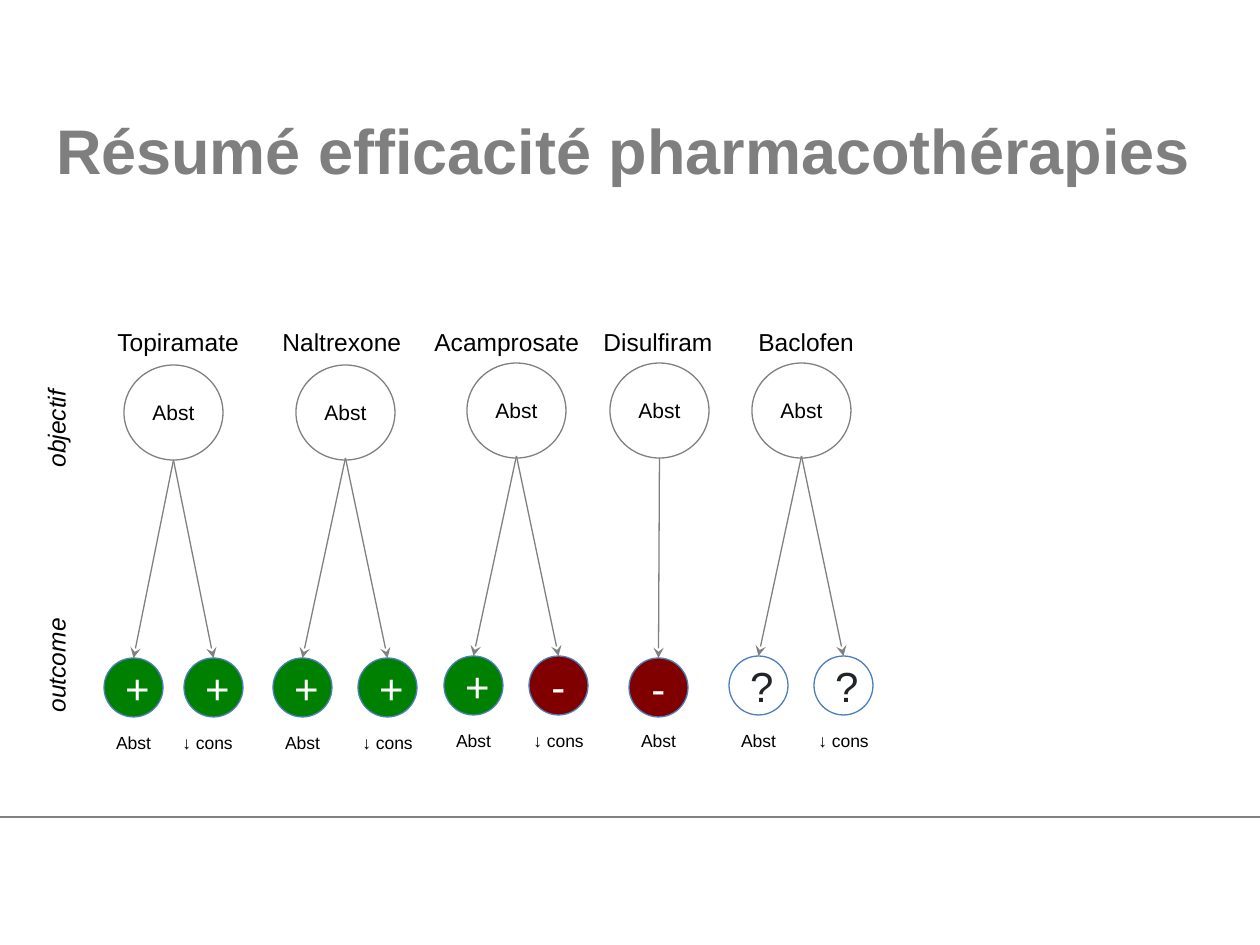
from collections import namedtuple
from lxml.etree import SubElement
from pptx import Presentation
from pptx.dml.color import RGBColor
from pptx.enum.shapes import MSO_CONNECTOR, MSO_SHAPE
from pptx.enum.text import MSO_ANCHOR, PP_ALIGN
from pptx.oxml.ns import qn
from pptx.util import Pt

SCALE = 914400 / 126  # EMU per px
WHITE = RGBColor(0xFF, 0xFF, 0xFF)
BLACK = RGBColor(0, 0, 0)
INK = RGBColor(0x22, 0x25, 0x27)
GREY = RGBColor(0x80, 0x80, 0x80)
TITLE = RGBColor(0x7F, 0x7F, 0x7F)
BLUE = RGBColor(0x4B, 0x7E, 0xBC)
GREEN = RGBColor(0, 0x80, 0)
RED = RGBColor(0x80, 0, 0)

DISC_W, DISC_H, DOT = 99, 95, 59
# Fill and text colour of each sign
SIGNS = {"+": (GREEN, WHITE), "-": (RED, WHITE), "?": (WHITE, INK)}
ENDS = ("Abst", "↓ cons")
END_W = (79, 126)

# dots: (left, sign); nudge: shift of each end label
Drug = namedtuple("Drug", "name left width disc top start dot_top end_top dots nudge")
DRUGS = [
    Drug("Topiramate", 105, 147, 124, 365, 460, 658, 726,
         [(104, "+"), (184, "+")], (0, -6)),
    Drug("Naltrexone", 270, 145, 296, 365, 458, 658, 726,
         [(273, "+"), (358, "+")], (0, 0)),
    Drug("Acamprosate", 422, 171, 467, 363, 456, 656, 724,
         [(444, "+"), (529, "-")], (0, 0)),
    Drug("Disulfiram", 591, 135, 610, 363, 458, 658, 724,
         [(629, "-")], (0,)),
    Drug("Baclofen", 746, 122, 752, 363, 456, 656, 724,
         [(729, "?"), (814, "?")], (0, 0)),
]


def px(*sizes):
    return [round(size * SCALE) for size in sizes]


def put_text(frame, text, size=14, color=BLACK, align=PP_ALIGN.LEFT,
             anchor=MSO_ANCHOR.TOP, wrap=True, bold=False, italic=False):
    frame.word_wrap = wrap
    frame.vertical_anchor = anchor
    para = frame.paragraphs[0]
    para.alignment = align
    run = para.add_run()
    run.text = text
    font = run.font
    font.name, font.size = "Arial", Pt(size)
    font.bold, font.italic = bold, italic
    font.color.rgb = color


def add_label(slide, text, left, top, width, height, **form):
    frame = slide.shapes.add_textbox(*px(left, top, width, height)).text_frame
    put_text(frame, text, **form)
    return frame


def add_side(slide, text, top, height):
    frame = add_label(slide, text, 35, top, 55, height, italic=True, wrap=False)
    frame._txBody.bodyPr.set("vert", "vert270")


def add_disc(slide, text, left, top, width, height, fill, line, **form):
    disc = slide.shapes.add_shape(MSO_SHAPE.OVAL, *px(left, top, width, height))
    disc.shadow.inherit = False
    disc.fill.solid()
    disc.fill.fore_color.rgb = fill
    disc.line.color.rgb = line
    disc.line.width = Pt(0.75)
    put_text(disc.text_frame, text, align=PP_ALIGN.CENTER,
             anchor=MSO_ANCHOR.MIDDLE, **form)


def add_line(slide, x1, y1, x2, y2, arrow=False):
    line = slide.shapes.add_connector(MSO_CONNECTOR.STRAIGHT, *px(x1, y1, x2, y2))
    line.line.color.rgb = GREY
    line.line.width = Pt(0.75)
    if arrow:
        SubElement(line.line._get_or_add_ln(), qn("a:tailEnd"), type="stealth")
    SubElement(line._element.spPr, qn("a:effectLst"))


def add_drug(slide, drug):
    add_label(slide, drug.name, drug.left, 321, drug.width, 43, wrap=False)
    add_disc(slide, "Abst", drug.disc, drug.top, DISC_W, DISC_H, WHITE, GREY, size=12)
    # Outcomes below the goal
    for (left, sign), text, width, shift in zip(drug.dots, ENDS, END_W, drug.nudge):
        fill, color = SIGNS[sign]
        mid = left + DOT / 2
        add_disc(slide, sign, left, drug.dot_top, DOT, DOT, fill, BLUE,
                 size=24, color=color)
        add_line(slide, drug.disc + DISC_W / 2, drug.start, mid, drug.dot_top, arrow=True)
        add_label(slide, text, mid - width / 2 + shift, drug.end_top, width, 34,
                  size=10, align=PP_ALIGN.CENTER)


def main():
    deck = Presentation()
    deck.slide_width, deck.slide_height = px(1260, 945)
    slide = deck.slides.add_slide(deck.slide_layouts[6])

    # Footer rule
    add_line(slide, 0, 817, 1260, 817)

    # Title
    frame = add_label(slide, "Résumé efficacité pharmacothérapies", 56, 71, 1165, 157,
                      size=36, color=TITLE, bold=True, anchor=MSO_ANCHOR.MIDDLE)
    frame.margin_left = frame.margin_right = 0
    frame.margin_top = frame.margin_bottom = 0

    # Row names
    add_side(slide, "objectif", 383, 97)
    add_side(slide, "outcome", 612, 113)

    # Drug trees
    for drug in DRUGS:
        add_drug(slide, drug)

    deck.save("out.pptx")


if __name__ == "__main__":
    main()
